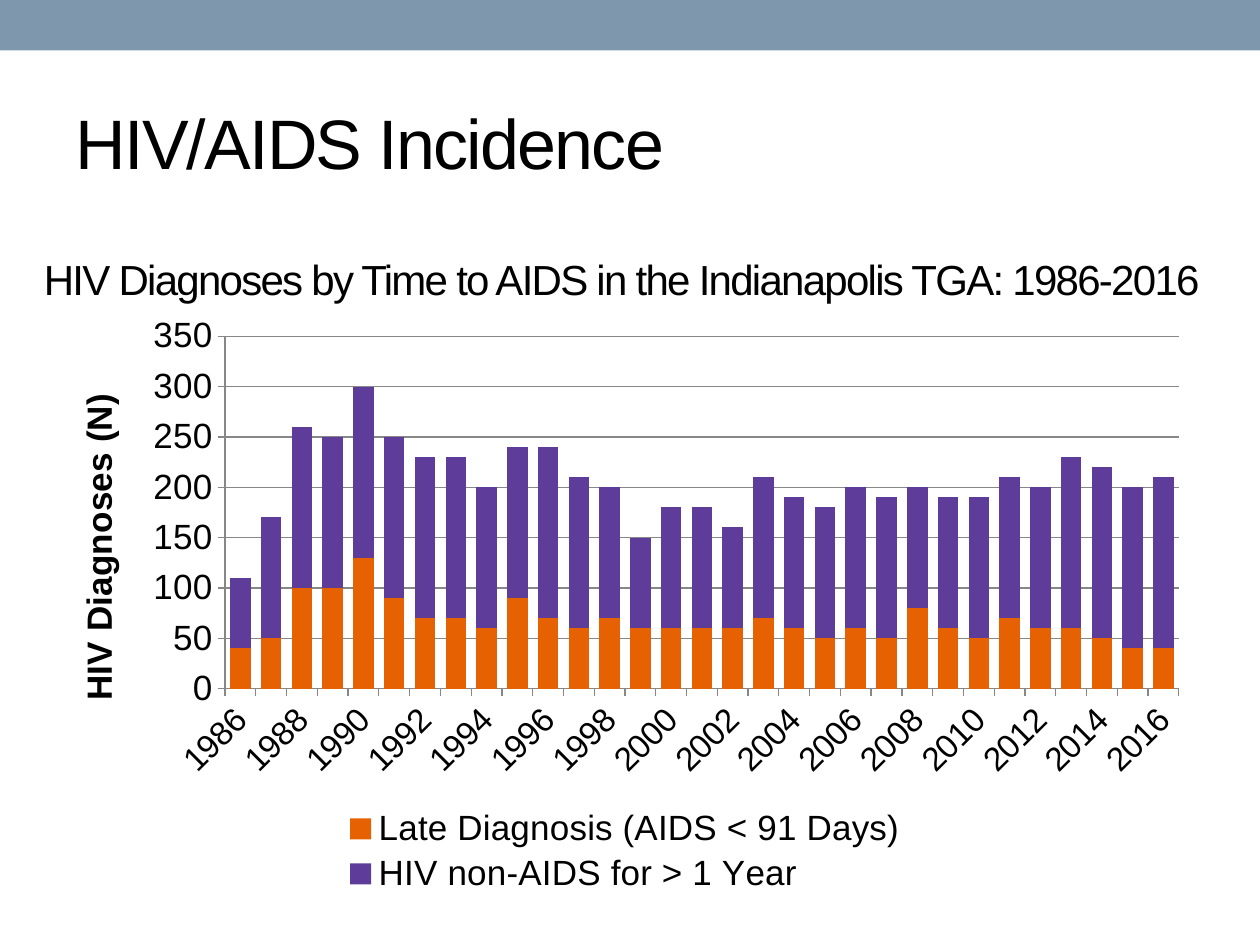
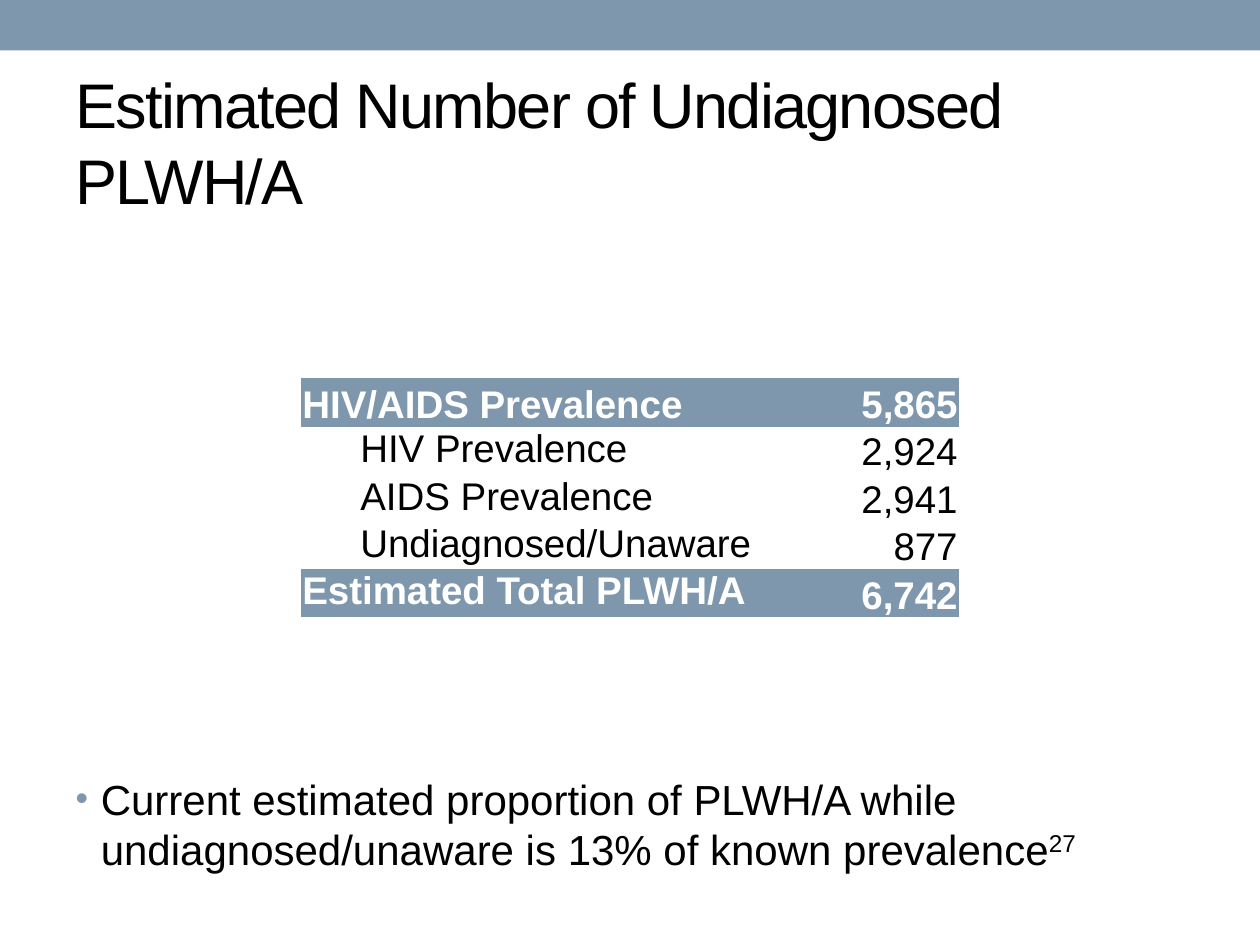
from lxml import etree
from pptx import Presentation
from pptx.chart.data import CategoryChartData
from pptx.dml.color import RGBColor
from pptx.enum.chart import XL_CHART_TYPE, XL_LEGEND_POSITION, XL_TICK_MARK
from pptx.enum.shapes import MSO_SHAPE
from pptx.enum.text import MSO_ANCHOR, MSO_AUTO_SIZE, PP_ALIGN
from pptx.oxml import parse_xml
from pptx.oxml.ns import nsdecls, qn
from pptx.util import Inches, Pt

STACKED = XL_CHART_TYPE.COLUMN_STACKED
LEGEND_BOTTOM = XL_LEGEND_POSITION.BOTTOM
TICK_OUT = XL_TICK_MARK.OUTSIDE
RECTANGLE = MSO_SHAPE.RECTANGLE
TOP, MIDDLE, BOTTOM = MSO_ANCHOR.TOP, MSO_ANCHOR.MIDDLE, MSO_ANCHOR.BOTTOM
LEFT, RIGHT = PP_ALIGN.LEFT, PP_ALIGN.RIGHT
FIXED_SIZE = MSO_AUTO_SIZE.NONE

SLATE = RGBColor(0x7E, 0x97, 0xAD)
BLACK = RGBColor(0x00, 0x00, 0x00)
WHITE = RGBColor(0xFF, 0xFF, 0xFF)
ORANGE = RGBColor(0xE6, 0x61, 0x01)
PURPLE = RGBColor(0x5E, 0x3C, 0x99)
GRAY = RGBColor(0x87, 0x87, 0x87)

FONT = "Arial"
COLUMNS, ROWS = 100, 75
TITLE_ONLY, TITLE_AND_BODY = 5, 1
PLAIN_TABLE_STYLE = "{2D5ABB26-0587-4C30-8999-92F81FD0307C}"

YEARS = [str(year) for year in range(1986, 2017)]
LATE_DIAGNOSES = [40, 50, 100, 100, 130, 90, 70, 70, 60, 90, 70, 60, 70, 60, 60, 60,
                  60, 70, 60, 50, 60, 50, 80, 60, 50, 70, 60, 60, 50, 40, 40]
NON_AIDS_DIAGNOSES = [70, 120, 160, 150, 170, 160, 160, 160, 140, 150, 170, 150, 130, 90, 120, 120,
                      100, 140, 130, 130, 140, 140, 120, 130, 140, 140, 140, 170, 170, 160, 170]
DIAGNOSES = [
    ("Late Diagnosis (AIDS < 91 Days)", LATE_DIAGNOSES, ORANGE),
    ("HIV non-AIDS for > 1 Year", NON_AIDS_DIAGNOSES, PURPLE),
]
PREVALENCE = [
    ("HIV/AIDS Prevalence", "5,865", "total"),
    ("HIV Prevalence", "2,924", "part"),
    ("AIDS Prevalence", "2,941", "part"),
    ("Undiagnosed/Unaware", "877", "part"),
    ("Estimated Total PLWH/A", "6,742", "total"),
]


def write(para, text, size=24, color=BLACK, bold=False, spacing=None, raised=None, align=LEFT):
    para.alignment = align
    span = para.add_run()
    span.text = text
    font = span.font
    font.name, font.size, font.bold = FONT, Pt(size), bold
    font.color.rgb = color
    properties = font._element
    if spacing is not None:
        properties.set("spc", str(spacing * 100))
    if raised is not None:
        properties.set("baseline", str(raised * 1000))
    return span


def set_layout(parent, index, inner=False, **percents):
    for old in parent.findall(qn("c:layout")):
        parent.remove(old)
    layout = parse_xml(f"<c:layout {nsdecls('c')}><c:manualLayout/></c:layout>")
    manual = layout[0]
    settings = [("layoutTarget", "inner")] if inner else []
    settings += [("xMode", "edge"), ("yMode", "edge")]
    settings += [(name, percent / 100) for name, percent in percents.items()]
    for name, value in settings:
        etree.SubElement(manual, qn(f"c:{name}")).set("val", str(value))
    parent.insert(index, layout)


class DeckBuilder:
    def __init__(self):
        self.deck = Presentation()
        self.deck.slide_width, self.deck.slide_height = Inches(10), Inches(7.5)
        self.page = None

    def grid(self, left, top, width, height):
        column = self.deck.slide_width / COLUMNS
        row = self.deck.slide_height / ROWS
        return int(left * column), int(top * row), int(width * column), int(height * row)

    def place(self, shape, area):
        shape.left, shape.top, shape.width, shape.height = self.grid(*area)

    def add_page(self, layout, title, size):
        self.page = self.deck.slides.add_slide(self.deck.slide_layouts[layout])
        box = self.page.shapes.title
        self.place(box, (5, 5.8, 90, 10.8))
        self.fill_frame(box.text_frame, title, MIDDLE, size=size, spacing=-1)

    def master_band(self):
        band = self.page.shapes.add_shape(RECTANGLE, *self.grid(0, 0, COLUMNS, 4))
        band.shadow.inherit = False
        band.fill.solid()
        band.fill.fore_color.rgb = SLATE
        band.line.fill.background()
        element = band._element
        element.nvSpPr.cNvPr.set("id", "100")
        self.deck.slide_master.shapes._spTree.insert(2, element)

    def fill_frame(self, frame, text, anchor, **style):
        frame.word_wrap = True
        frame.auto_size = FIXED_SIZE
        frame.vertical_anchor = anchor
        write(frame.paragraphs[0], text, **style)

    def caption(self, text, area, **style):
        box = self.page.shapes.add_textbox(*self.grid(*area))
        self.fill_frame(box.text_frame, text, MIDDLE, **style)

    def bullet(self, text, note, area):
        box = self.page.placeholders[1]
        self.place(box, area)
        self.fill_frame(box.text_frame, text, TOP)
        para = box.text_frame.paragraphs[0]
        write(para, note, raised=30)
        properties = para._p.get_or_add_pPr()
        properties.set("marL", str(Inches(0.2)))
        properties.set("indent", str(Inches(-0.2)))
        color = etree.SubElement(properties, qn("a:buClr"))
        etree.SubElement(color, qn("a:srgbClr")).set("val", str(SLATE))
        etree.SubElement(properties, qn("a:buSzPct")).set("val", "85000")
        etree.SubElement(properties, qn("a:buFont")).set("typeface", FONT)
        etree.SubElement(properties, qn("a:buChar")).set("char", "•")

    def stacked_columns(self, categories, series_rows, axis_title, area):
        data = CategoryChartData()
        data.categories = categories
        for name, values, _ in series_rows:
            data.add_series(name, values)
        chart = self.page.shapes.add_chart(STACKED, *self.grid(*area), data).chart
        chart.has_title = False
        chart.font.name, chart.font.size = FONT, Pt(20)
        chart.font.color.rgb = BLACK
        plot = chart.plots[0]
        plot.gap_width, plot.overlap = 50, 100
        plot.vary_by_categories = False
        for series, (_, _, color) in zip(plot.series, series_rows):
            series.format.fill.solid()
            series.format.fill.fore_color.rgb = color
        self.format_axes(chart, axis_title)
        chart.has_legend = True
        chart.legend.position = LEGEND_BOTTOM
        chart.legend.include_in_layout = False
        set_layout(chart.legend._element, 1, x=24, y=83.5, w=52, h=16)
        plot_area = chart._chartSpace.xpath(".//c:plotArea")[0]
        set_layout(plot_area, 0, inner=True, x=15.35, y=5.25, w=82.65, h=59)

    def format_axes(self, chart, axis_title):
        years, counts = chart.category_axis, chart.value_axis
        for axis, size in ((years, 19), (counts, 20)):
            axis.major_tick_mark = TICK_OUT
            axis.format.line.color.rgb = GRAY
            axis.tick_labels.font.size = Pt(size)
        counts.minimum_scale, counts.maximum_scale, counts.major_unit = 0, 350, 50
        counts.has_major_gridlines = True
        counts.major_gridlines.format.line.color.rgb = GRAY
        frame = counts.axis_title.text_frame
        write(frame.paragraphs[0], axis_title, size=20, bold=True)
        frame._txBody.bodyPr.set("rot", "-5400000")
        set_layout(counts.axis_title._element, 1, x=1.9, y=13.8)
        element = years._element
        element.xpath("./c:txPr/a:bodyPr")[0].set("rot", "-2700000")
        skip = parse_xml(f"<c:tickLblSkip {nsdecls('c')} val='2'/>")
        element.find(qn("c:noMultiLvlLbl")).addprevious(skip)

    def table(self, records, area, widths, heights):
        shape = self.page.shapes.add_table(len(records), len(widths), *self.grid(*area))
        table = shape.table
        table.first_row = table.horz_banding = False
        table._tbl.tblPr.find(qn("a:tableStyleId")).text = PLAIN_TABLE_STYLE
        for column, width in zip(table.columns, widths):
            column.width = self.grid(0, 0, width, 0)[2]
        for index, (label, count, kind) in enumerate(records):
            total = kind == "total"
            table.rows[index].height = self.grid(0, 0, 0, heights[kind])[3]
            label_anchor = BOTTOM if index == 0 else TOP
            label_inset = 0.01 if total else 0.47
            self.cell(table.cell(index, 0), label, total, label_anchor, LEFT, label_inset)
            self.cell(table.cell(index, 1), count, total, BOTTOM, RIGHT, 0.01)

    def cell(self, cell, text, total, anchor, align, inset):
        cell.margin_left = Inches(inset)
        cell.margin_top = cell.margin_right = Inches(0.01)
        cell.margin_bottom = 0
        cell.vertical_anchor = anchor
        if total:
            cell.fill.solid()
            cell.fill.fore_color.rgb = SLATE
        else:
            cell.fill.background()
        color = WHITE if total else BLACK
        write(cell.text_frame.paragraphs[0], text, size=22, color=color, bold=total, align=align)


def main():
    builder = DeckBuilder()

    builder.add_page(TITLE_ONLY, "HIV/AIDS Incidence", 40)
    builder.master_band()
    builder.caption("HIV Diagnoses by Time to AIDS in the Indianapolis TGA: 1986-2016",
                    (2.5, 18.35, 94.2, 7.5), spacing=-1)
    builder.stacked_columns(YEARS, DIAGNOSES, "HIV Diagnoses (N)", (3.8, 24.2, 91.6, 47.4))

    builder.add_page(TITLE_AND_BODY, "Estimated Number of Undiagnosed PLWH/A", 36)
    builder.bullet("Current estimated proportion of PLWH/A while undiagnosed/unaware "
                   "is 13% of known prevalence", "27", (5, 60.85, 90, 10))
    builder.table(PREVALENCE, (23.9, 30, 52.2, 19), (37.4, 14.8), {"total": 3.86, "part": 3.76})

    builder.deck.save("out.pptx")


if __name__ == "__main__":
    main()
